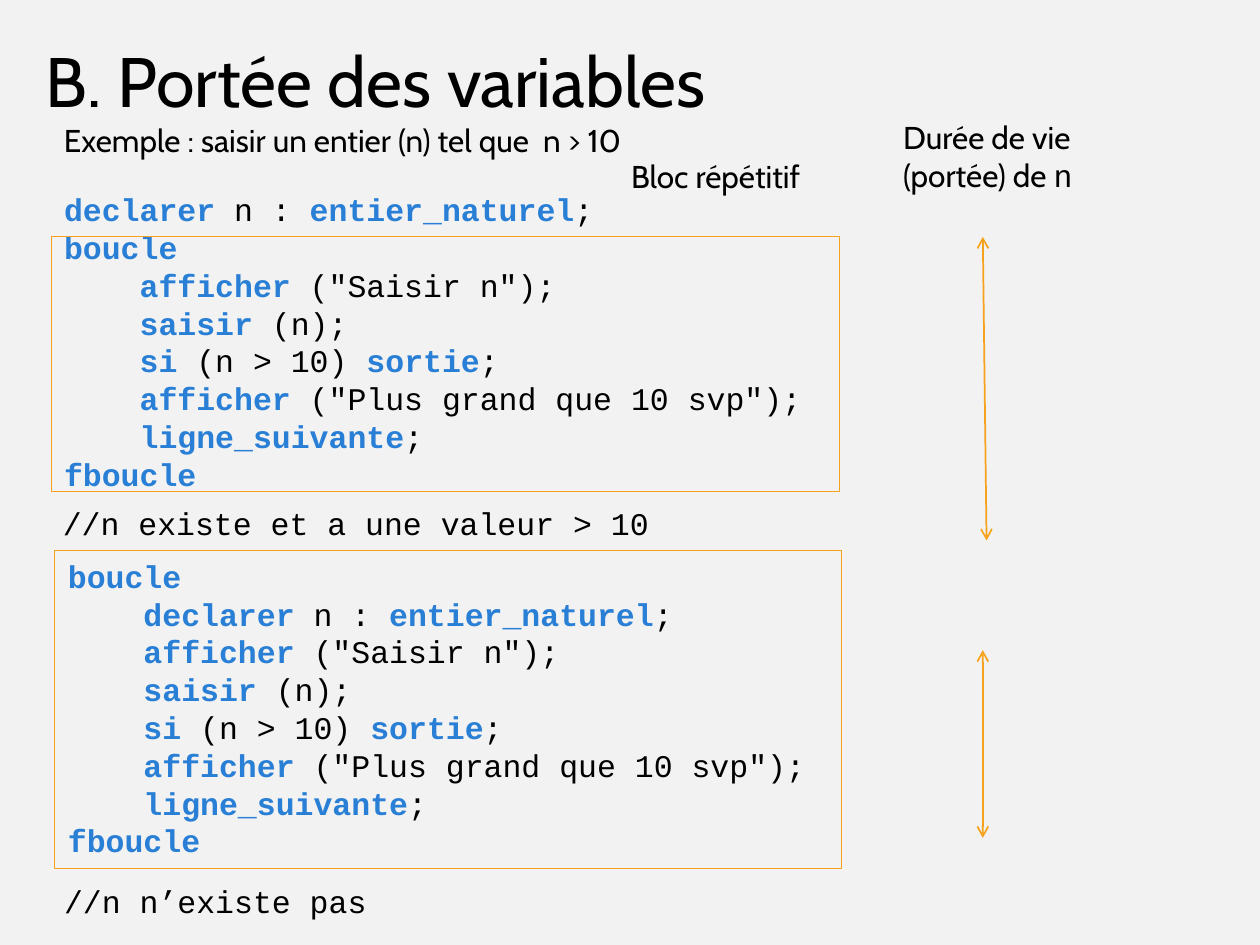
from pptx import Presentation
from pptx.dml.color import RGBColor
from pptx.enum.shapes import MSO_CONNECTOR, MSO_SHAPE
from pptx.enum.text import MSO_ANCHOR, MSO_AUTO_SIZE, PP_ALIGN
from pptx.oxml.ns import qn
from pptx.util import Inches, Pt
from lxml.etree import SubElement

COLS, ROWS = 100, 75
TEXT_FONT, CODE_FONT = "Cabin", "Courier New"
BLACK, BLUE, ORANGE, GREY = "000000", "297FD5", "F6A21D", "F2F2F2"


def rgb(value):
    return RGBColor.from_string(value)


class Deck:
    def __init__(self):
        self.prs = Presentation()
        self.prs.slide_width, self.prs.slide_height = Inches(10), Inches(7.5)
        self.s = self.prs.slides.add_slide(self.prs.slide_layouts[5])
        fill = self.s.background.fill
        fill.solid()
        fill.fore_color.rgb = rgb(GREY)

    def grid(self, *lengths):
        steps = self.prs.slide_width / COLS, self.prs.slide_height / ROWS
        return [round(n * steps[i % 2]) for i, n in enumerate(lengths)]

    def run(self, p, text, font=TEXT_FONT, size=18, color=BLACK, bold=False):
        r = p.add_run()
        r.text = text
        r.font.name, r.font.size, r.font.bold = font, Pt(size), bold
        r.font.color.rgb = rgb(color)

    def title(self, text, *place):
        sp = self.s.shapes.title
        sp.left, sp.top, sp.width, sp.height = self.grid(*place)
        tf = sp.text_frame
        tf.vertical_anchor, tf.auto_size = MSO_ANCHOR.TOP, MSO_AUTO_SIZE.NONE
        tf.paragraphs[0].alignment = PP_ALIGN.LEFT
        self.run(tf.paragraphs[0], text, size=40)

    def frame(self, *place):
        tf = self.s.shapes.add_textbox(*self.grid(*place)).text_frame
        tf.word_wrap, tf.auto_size = True, MSO_AUTO_SIZE.SHAPE_TO_FIT_TEXT
        return tf

    def label(self, runs, *place):
        p = self.frame(*place).paragraphs[0]
        for text, font in runs:
            self.run(p, text, font)

    def code(self, lines, *place):
        tf = self.frame(*place)
        for i, (level, line) in enumerate(lines):
            p = tf.add_paragraph() if i else tf.paragraphs[0]
            p._p.get_or_add_pPr().set("marL", str(Inches(0.6 * level)))
            for j, text in enumerate(line.split("*")):
                if text:
                    keyword = j % 2 == 1
                    self.run(p, text, CODE_FONT, color=BLUE if keyword else BLACK, bold=keyword)

    def box(self, *place):
        sp = self.s.shapes.add_shape(MSO_SHAPE.RECTANGLE, *self.grid(*place))
        sp.shadow.inherit = False
        sp.fill.background()
        sp.line.color.rgb, sp.line.width = rgb(ORANGE), Pt(0.5)

    def span(self, *ends):
        line = self.s.shapes.add_connector(MSO_CONNECTOR.STRAIGHT, *self.grid(*ends))
        line.line.color.rgb, line.line.width = rgb(ORANGE), Pt(1)
        ln = line.line._get_or_add_ln()
        for end in ("a:headEnd", "a:tailEnd"):
            SubElement(ln, qn(end)).set("type", "arrow")
        SubElement(line._element.spPr, qn("a:effectLst"))


def main():
    declaration = "*declarer* n : *entier_naturel*;"
    body = [
        (1, '*afficher* ("Saisir n");'),
        (1, "*saisir* (n);"),
        (1, "*si* (n > 10) *sortie*;"),
        (1, '*afficher* ("Plus grand que 10 svp");'),
        (1, "*ligne_suivante*;"),
    ]
    start, end = (0, "*boucle*"), (0, "*fboucle*")

    deck = Deck()
    deck.title("B. Portée des variables", 2.6, 2.5, 97, 10)
    deck.label([("Exemple : saisir un entier (n) tel que  n > 10", TEXT_FONT)], 4.1, 9.1, 80.3, 4)
    deck.label([("Bloc répétitif", TEXT_FONT)], 49.1, 12, 17.5, 4)
    deck.label([("Durée de vie (portée) de ", TEXT_FONT), ("n", CODE_FONT)], 70.7, 8.9, 17.5, 7.1)

    deck.code([(0, declaration), start, *body, end], 4.1, 14.6, 63.8, 25.2)
    deck.code([start, (1, declaration), *body, end], 4.4, 43.7, 63.8, 25.2)
    deck.code([(0, "//n existe et a une valeur > 10")], 4, 39.5, 66.6, 4)
    deck.code([(0, "//n n’existe pas")], 4.1, 69.5, 50.5, 4)

    deck.box(4.1, 18.8, 62.5, 20.2)
    deck.box(4.3, 43.7, 62.5, 25.2)
    deck.span(78, 18.8, 78.3, 42.9)
    deck.span(78, 51.6, 78, 66.5)
    deck.prs.save("out.pptx")


if __name__ == "__main__":
    main()
